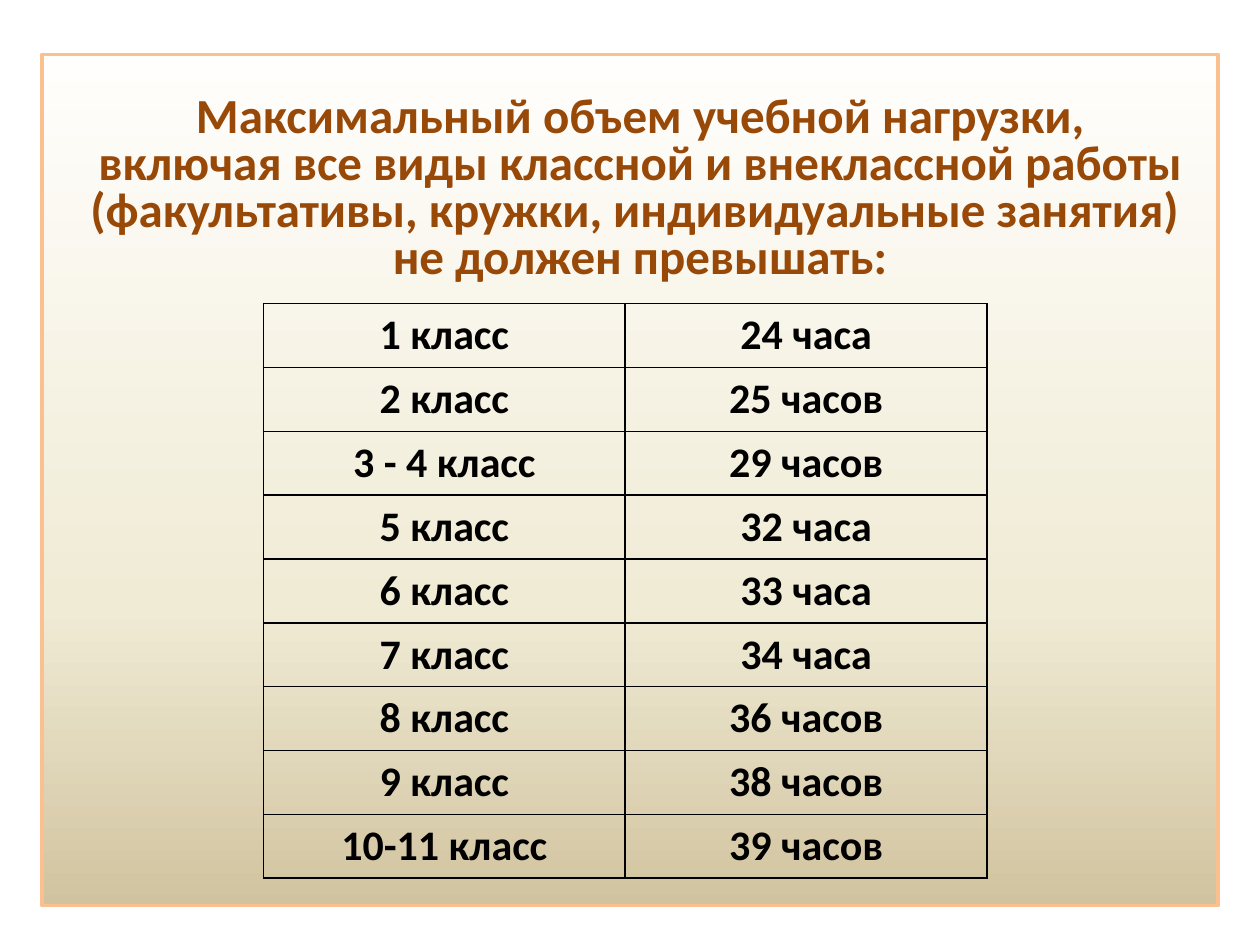
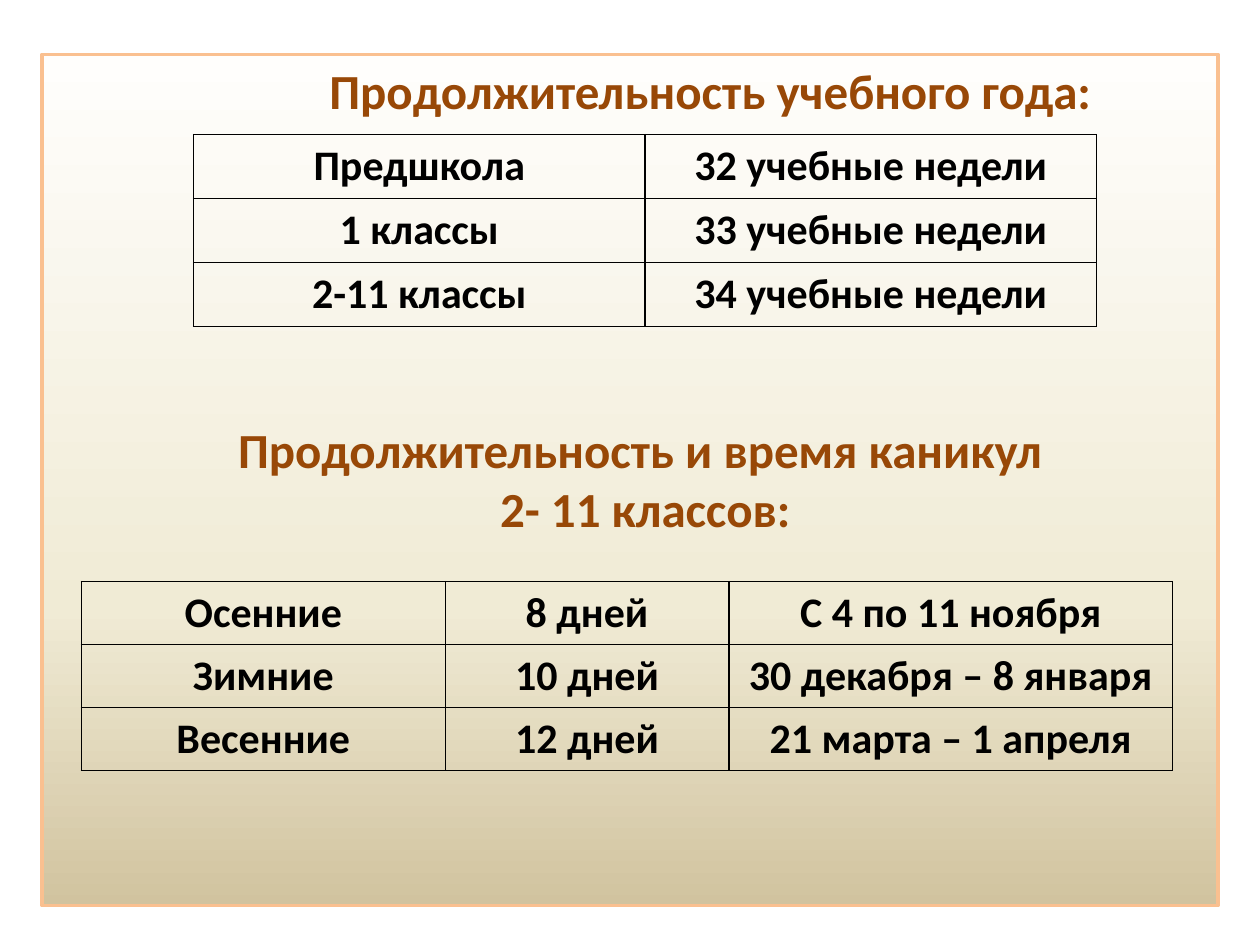
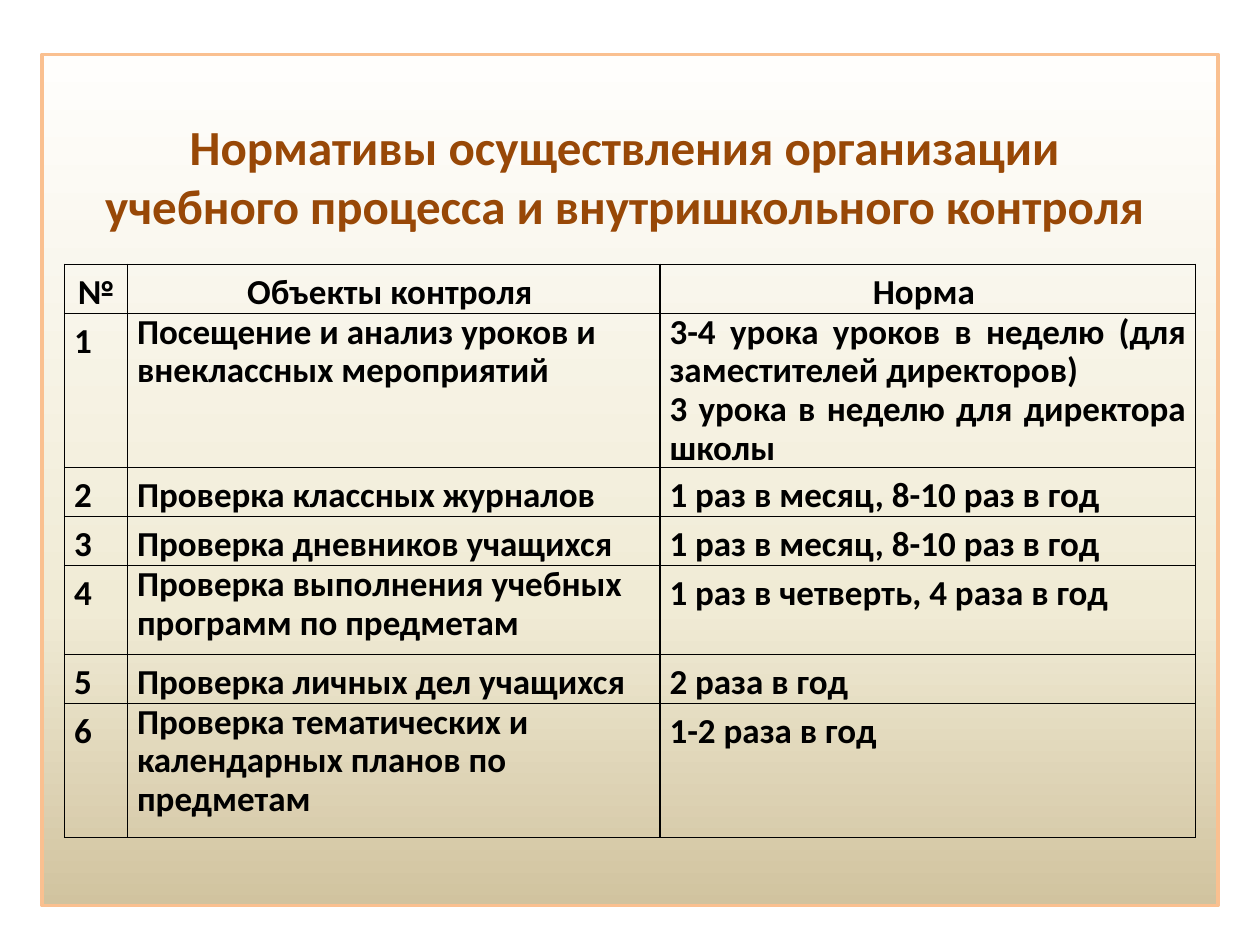
from copy import deepcopy

from lxml.etree import SubElement
from pptx import Presentation
from pptx.dml.color import RGBColor
from pptx.enum.shapes import MSO_SHAPE
from pptx.enum.text import MSO_ANCHOR, PP_ALIGN
from pptx.oxml.ns import qn
from pptx.util import Pt

# Shared style
FONT = "Calibri"
COLORS = {"title": "984807", "text": "000000", "grid": "000000", "frame": "FAC090"}
GRADIENT = [(0, "FFFEFC"), (0.65, "F0EBD5"), (1, "D1C39F")]
FRAME = (24, 31, 672, 486.5)
LEFT, CENTER, JUSTIFY = PP_ALIGN.LEFT, PP_ALIGN.CENTER, PP_ALIGN.JUSTIFY
MARGINS = (7.2, 3.6)
WRAPPED_LENGTH = 35  # longer cell texts take several lines and are set tighter

# Content: titles and tables of each slide
SLIDES = [
    {
        "titles": [
            {"box": (25.2, 43.2, 681, 130.3), "spacing": 0.8, "text": [
                "Максимальный объем учебной нагрузки,\n"
                "включая все виды классной и внеклассной работы "
                "(факультативы, кружки, индивидуальные занятия) \n"
                "не должен превышать:"]},
        ],
        "tables": [
            {"at": (150.5, 173.5), "cols": [206.8, 206.8], "heights": [36.5] * 9, "rows": [
                ("1 класс", "24 часа"),
                ("2 класс", "25 часов"),
                ("3 - 4 класс", "29 часов"),
                ("5 класс", "32 часа"),
                ("6 класс", "33 часа"),
                ("7 класс", "34 часа"),
                ("8 класс", "36 часов"),
                ("9 класс", "38 часов"),
                ("10-11 класс", "39 часов")]},
        ],
    },
    {
        "titles": [
            {"box": (127.5, 37.4, 556.5, 33.8), "spacing": 0.8,
             "text": ["Продолжительность учебного года:"]},
            {"box": (59.8, 236.2, 617.8, 74.9), "anchor": MSO_ANCHOR.TOP,
             "text": ["Продолжительность и время каникул ", "2- 11 классов:"]},
        ],
        "tables": [
            {"at": (110.6, 77), "cols": [258, 258], "heights": [36.5] * 3, "rows": [
                ("Предшкола", "32 учебные недели"),
                ("1 классы", "33 учебные недели"),
                ("2-11 классы", "34 учебные недели")]},
            {"at": (46.5, 332.3), "cols": [208, 162, 253.6], "heights": [36] * 3, "rows": [
                ("Осенние", "8 дней", "С 4 по 11 ноября"),
                ("Зимние", "10 дней", "30 декабря – 8 января"),
                ("Весенние", "12 дней", "21 марта – 1 апреля")]},
        ],
    },
    {
        "titles": [
            {"box": (36, 49, 648, 102.2), "text": [
                "Нормативы осуществления организации \n"
                "учебного процесса и внутришкольного контроля "]},
        ],
        "tables": [
            {"at": (36.9, 151), "cols": [36, 304.3, 306],
             "heights": [28.1, 88, 28.1, 28.1, 50.6, 28.1, 76.6],
             "size": 20, "margins": (5.4, 0), "spacing": 1.15,
             "header": True, "aligns": [JUSTIFY, LEFT, JUSTIFY], "rows": [
                 ("№ ", "Объекты контроля ", "Норма "),
                 ("1 ", "Посещение и анализ уроков и внеклассных мероприятий",
                  ["3-4 урока уроков в неделю (для заместителей директоров)",
                   "3 урока в неделю для директора школы"]),
                 ("2 ", "Проверка классных журналов", "1 раз в месяц, 8-10 раз в год "),
                 ("3 ", "Проверка дневников учащихся", "1 раз в месяц, 8-10 раз в год "),
                 ("4 ", "Проверка выполнения учебных программ по предметам",
                  "1 раз в четверть, 4 раза в год "),
                 ("5 ", "Проверка личных дел учащихся", "2 раза в год "),
                 ("6 ", "Проверка тематических и календарных планов по предметам",
                  "1-2 раза в год ")]},
        ],
    },
]


def rgb(name):
    return RGBColor.from_string(COLORS.get(name, name))


def write(tf, paragraphs, *, size, color="text", align=CENTER, spacing=None):
    """Fill a text frame; a newline inside a paragraph is a line break."""
    for i, text in enumerate(paragraphs):
        p = tf.paragraphs[0] if i == 0 else tf.add_paragraph()
        p.alignment = align
        if spacing:
            p.line_spacing = spacing
        for j, line in enumerate(text.split("\n")):
            if j:
                p.add_line_break()
            r = p.add_run()
            r.text = line
            r.font.name, r.font.size, r.font.bold = FONT, Pt(size), True
            r.font.color.rgb = rgb(color)


def add_frame(s):
    sp = s.shapes.add_shape(MSO_SHAPE.RECTANGLE, *map(Pt, FRAME))
    sp.shadow.inherit = False
    sp.line.color.rgb, sp.line.width = rgb("frame"), Pt(2)
    sp.fill.gradient()
    sp.fill.gradient_angle = 270
    stops = sp.element.spPr.find(".//" + qn("a:gsLst"))
    stops.append(deepcopy(stops[-1]))
    for stop, (position, color) in zip(sp.fill.gradient_stops, GRADIENT):
        stop.position, stop.color.rgb = position, rgb(color)


def add_title(s, box, text, spacing=None, anchor=MSO_ANCHOR.MIDDLE):
    tf = s.shapes.add_textbox(*map(Pt, box)).text_frame
    tf.word_wrap, tf.vertical_anchor = True, anchor
    write(tf, text, size=28, color="title", spacing=spacing)


def add_borders(cell):
    tc_pr = cell._tc.get_or_add_tcPr()
    for i, side in enumerate(("lnL", "lnR", "lnT", "lnB")):
        ln = SubElement(tc_pr, qn("a:" + side), w=str(Pt(1)))
        fill = SubElement(ln, qn("a:solidFill"))
        SubElement(fill, qn("a:srgbClr"), val=COLORS["grid"])
        tc_pr.insert(i, ln)


def add_grid(s, at, cols, heights, rows, size=24, margins=MARGINS, spacing=None,
             header=False, aligns=None):
    area = (*at, sum(cols), sum(heights))
    table = s.shapes.add_table(len(rows), len(cols), *map(Pt, area)).table
    table.first_row = table.horz_banding = False
    for col, width in zip(table.columns, cols):
        col.width = Pt(width)
    for i, (row, height) in enumerate(zip(rows, heights)):
        table.rows[i].height = Pt(height)
        for j, content in enumerate(row):
            cell = table.cell(i, j)
            cell.fill.background()
            add_borders(cell)
            cell.margin_left = cell.margin_right = Pt(margins[0])
            cell.margin_top = cell.margin_bottom = Pt(margins[1])
            text = [content] if isinstance(content, str) else content
            wrapped = spacing and len(text[0]) > WRAPPED_LENGTH
            centered = not aligns or (header and i == 0)
            write(cell.text_frame, text, size=size,
                  align=CENTER if centered else aligns[j],
                  spacing=0.9 if wrapped else spacing)


def main():
    prs = Presentation()
    prs.slide_width, prs.slide_height = Pt(720), Pt(540)
    for content in SLIDES:
        s = prs.slides.add_slide(prs.slide_layouts[6])
        add_frame(s)
        for title in content["titles"]:
            add_title(s, **title)
        for grid in content["tables"]:
            add_grid(s, **grid)
    prs.save("out.pptx")


if __name__ == "__main__":
    main()
